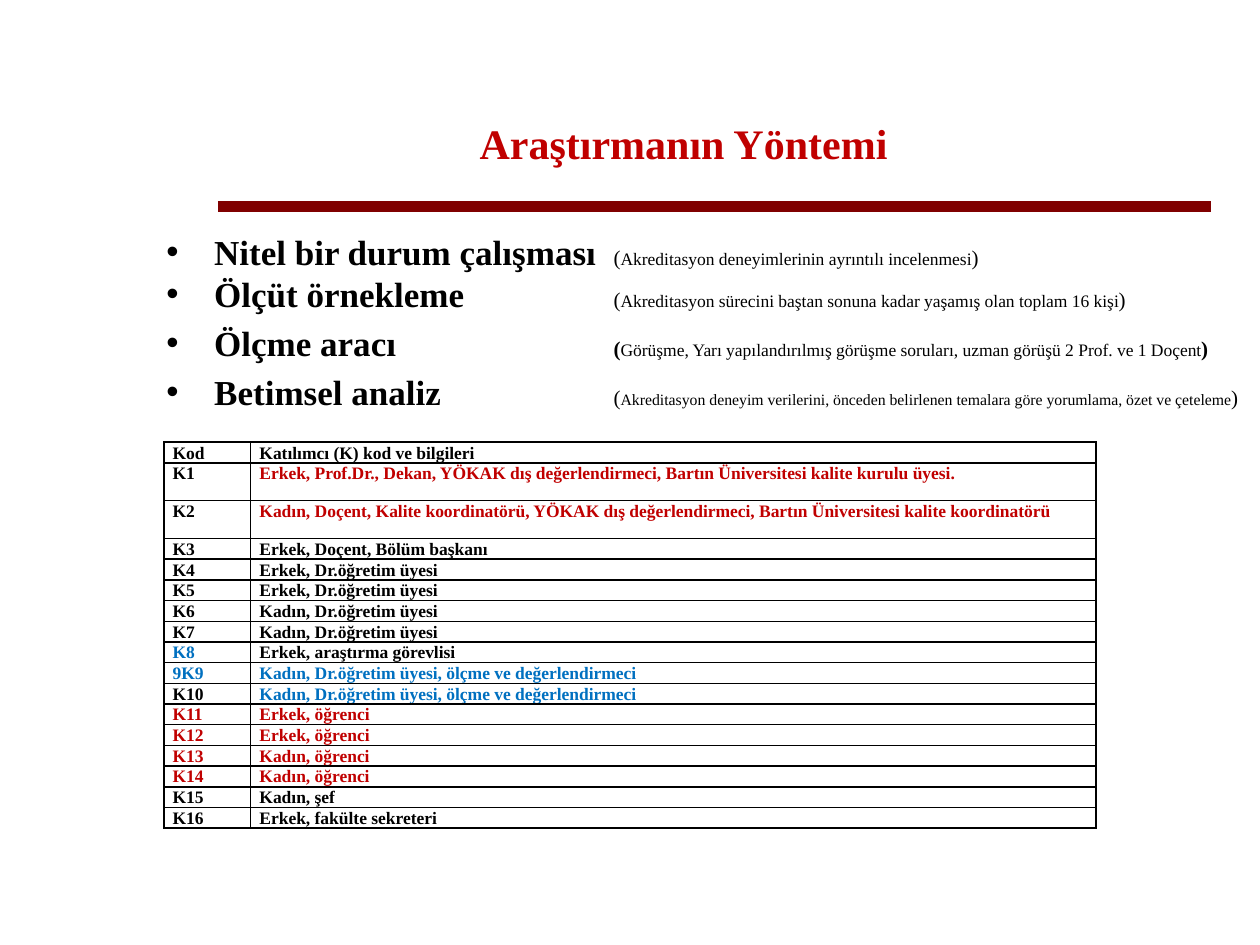
from dataclasses import dataclass
from typing import Any

from lxml import etree
from pptx import Presentation
from pptx import util as u
from pptx.dml.color import RGBColor
from pptx.enum import shapes, text
from pptx.oxml.ns import qn

COLORS = {"ink": "000000", "red": "C00000", "blue": "0070C0", "rule": "800000"}

METHODS = [
    ("Nitel bir durum çalışması", "Akreditasyon deneyimlerinin ayrıntılı incelenmesi", 10, False, 0),
    ("Ölçüt örnekleme", "Akreditasyon sürecini baştan sonuna kadar yaşamış olan toplam 16 kişi", 10, False, 0),
    ("Ölçme aracı", "Görüşme, Yarı yapılandırılmış görüşme soruları, uzman görüşü 2 Prof. ve 1 Doçent", 10, True, 4),
    ("Betimsel analiz", "Akreditasyon deneyim verilerini, önceden belirlenen temalara göre yorumlama, özet ve çeteleme",
     9, False, 4),
]

PARTICIPANTS = [
    ("Kod", "ink", "Katılımcı (K) kod ve bilgileri", "ink"),
    ("K1", "ink", "Erkek, Prof.Dr., Dekan, YÖKAK dış değerlendirmeci, Bartın Üniversitesi kalite kurulu üyesi.", "red"),
    ("K2", "ink", "Kadın, Doçent, Kalite koordinatörü, YÖKAK dış değerlendirmeci, "
     "Bartın Üniversitesi kalite koordinatörü", "red"),
    ("K3", "ink", "Erkek, Doçent, Bölüm başkanı", "ink"),
    ("K4", "ink", "Erkek, Dr.öğretim üyesi", "ink"),
    ("K5", "ink", "Erkek, Dr.öğretim üyesi", "ink"),
    ("K6", "ink", "Kadın, Dr.öğretim üyesi", "ink"),
    ("K7", "ink", "Kadın, Dr.öğretim üyesi", "ink"),
    ("K8", "blue", "Erkek, araştırma görevlisi", "ink"),
    ("9K9", "blue", "Kadın, Dr.öğretim üyesi, ölçme ve değerlendirmeci", "blue"),
    ("K10", "ink", "Kadın, Dr.öğretim üyesi, ölçme ve değerlendirmeci", "blue"),
    ("K11", "red", "Erkek, öğrenci", "red"),
    ("K12", "red", "Erkek, öğrenci", "red"),
    ("K13", "red", "Kadın, öğrenci", "red"),
    ("K14", "red", "Kadın, öğrenci", "red"),
    ("K15", "ink", "Kadın, şef", "ink"),
    ("K16", "ink", "Erkek, fakülte sekreteri", "ink"),
]
TALL_ROWS = (1, 2)


@dataclass
class MethodSlide:
    """Style and current slide, with one method per kind of element."""

    slide: Any
    font: str = "Times New Roman"

    def run(self, paragraph, words, size, color="ink", bold=True):
        run = paragraph.add_run()
        run.text = words
        run.font.name = self.font
        run.font.size = u.Pt(size)
        run.font.bold = bold
        run.font.color.rgb = RGBColor.from_string(COLORS[color])

    def place(self, holder, left, top, width, height):
        holder.left, holder.top = u.Inches(left), u.Inches(top)
        holder.width, holder.height = u.Inches(width), u.Inches(height)
        frame = holder.text_frame
        frame.word_wrap = True
        frame.auto_size = text.MSO_AUTO_SIZE.NONE
        return frame

    def title(self, words):
        frame = self.place(self.slide.shapes.title, 1.85, 0.3, 6.77, 1.25)
        frame.vertical_anchor = text.MSO_ANCHOR.BOTTOM
        frame.margin_bottom = u.Inches(0.22)
        heading = frame.paragraphs[0]
        heading.alignment = text.PP_ALIGN.CENTER
        heading._p.get_or_add_pPr().set("marL", str(u.Inches(0.38)))
        self.run(heading, words, 24, "red")

    def rule(self, left, right, y):
        line = self.slide.shapes.add_connector(
            shapes.MSO_CONNECTOR.STRAIGHT, u.Inches(left), u.Inches(y), u.Inches(right), u.Inches(y))
        line.line.color.rgb = RGBColor.from_string(COLORS["rule"])
        line.line.width = u.Pt(6)
        etree.SubElement(line._element.spPr, qn("a:effectLst"))

    def bullets(self, methods, tab=3.55):
        frame = self.place(self.slide.placeholders[1], 1.22, 1.78, 8.74, 5.52)
        for index, (term, note, size, bold_paren, before) in enumerate(methods):
            item = frame.add_paragraph() if index else frame.paragraphs[0]
            props = item._p.get_or_add_pPr()
            props.set("marL", str(u.Inches(0.38)))
            props.set("indent", str(-u.Inches(0.38)))
            etree.SubElement(props, qn("a:buChar"), char="•")
            tabs = etree.SubElement(props, qn("a:tabLst"))
            etree.SubElement(tabs, qn("a:tab"), pos=str(u.Inches(tab)), algn="l")
            item.alignment = text.PP_ALIGN.JUSTIFY
            item.space_before = u.Pt(before)
            self.run(item, term + "\t", 20)
            self.run(item, "(", 12, bold=bold_paren)
            self.run(item, note, size, bold=False)
            self.run(item, ")", 12, bold=bold_paren)

    def borders(self, cell):
        props = cell._tc.get_or_add_tcPr()
        for position, side in enumerate(("a:lnL", "a:lnR", "a:lnT", "a:lnB")):
            edge = etree.Element(qn(side), w=str(u.Pt(1)))
            fill = etree.SubElement(edge, qn("a:solidFill"))
            etree.SubElement(fill, qn("a:srgbClr"), val=COLORS["ink"])
            props.insert(position, edge)

    def cell(self, cell, words, color):
        cell.fill.background()
        cell.margin_left = cell.margin_right = u.Inches(0.07)
        cell.margin_top = cell.margin_bottom = 0
        entry = cell.text_frame.paragraphs[0]
        entry.alignment = text.PP_ALIGN.JUSTIFY
        entry.line_spacing = 1.07
        self.run(entry, words, 10, color)
        self.borders(cell)

    def table(self, rows):
        table = self.slide.shapes.add_table(
            len(rows), 2, u.Inches(1.3), u.Inches(3.51), u.Inches(7.4), u.Inches(2.7)).table
        table.first_row = table.horz_banding = False
        for column, width in zip(table.columns, (0.69, 6.71)):
            column.width = u.Inches(width)
        for index, (code, code_color, details, details_color) in enumerate(rows):
            table.rows[index].height = u.Inches(0.3 if index in TALL_ROWS else 0.14)
            self.cell(table.cell(index, 0), code, code_color)
            self.cell(table.cell(index, 1), details, details_color)


def main():
    deck = Presentation()
    deck.slide_width, deck.slide_height = u.Inches(10), u.Inches(7.5)
    page = MethodSlide(deck.slides.add_slide(deck.slide_layouts[1]))
    page.rule(1.73, 9.61, 1.64)
    page.title("Araştırmanın Yöntemi")
    page.bullets(METHODS)
    page.table(PARTICIPANTS)
    deck.save("out.pptx")


if __name__ == "__main__":
    main()
